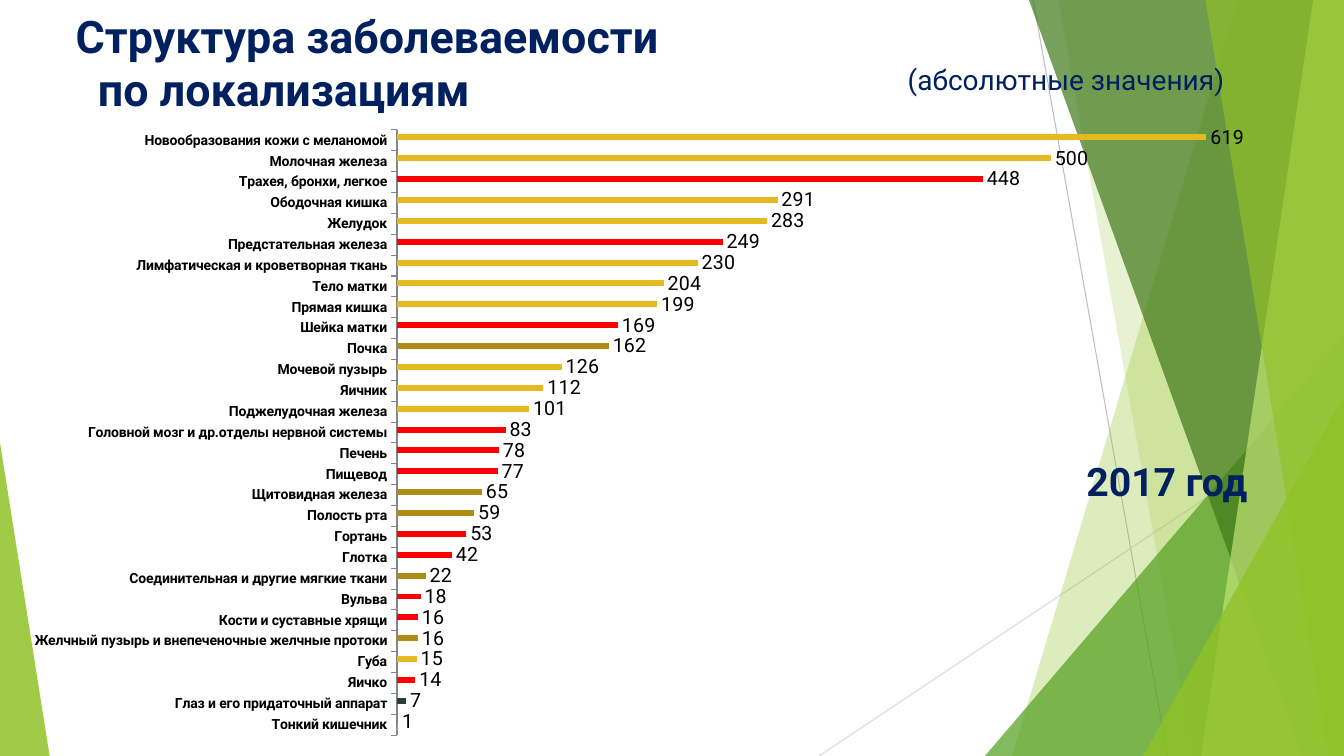
from lxml.etree import SubElement
from pptx import Presentation
from pptx.chart.data import CategoryChartData
from pptx.dml.color import RGBColor
from pptx.enum.chart import XL_CHART_TYPE as ChartType, XL_LABEL_POSITION as LabelPos
from pptx.enum.chart import XL_TICK_MARK as Tick
from pptx.enum.shapes import MSO_CONNECTOR as Connector, MSO_SHAPE as Preset
from pptx.enum.text import MSO_ANCHOR as Anchor, PP_ALIGN as Align
from pptx.oxml import parse_xml
from pptx.oxml.ns import nsdecls, qn
from pptx.util import Pt

FONT = "Roboto"
NAVY, GREEN, LEAF = "002060", "90C226", "54A021"
GOLD, RED, OLIVE, SLATE = "E6B91E", "FF0000", "AF8C14", "2C3C43"
WIDTH, HEIGHT = 960, 540

# From the bottom bar to the top one
INCIDENCE = [
    ("Тонкий кишечник", 1, OLIVE),
    ("Глаз и его придаточный аппарат", 7, SLATE),
    ("Яичко", 14, RED),
    ("Губа", 15, GOLD),
    ("Желчный пузырь и внепеченочные желчные протоки", 16, OLIVE),
    ("Кости и суставные хрящи", 16, RED),
    ("Вульва", 18, RED),
    ("Соединительная и другие мягкие ткани", 22, OLIVE),
    ("Глотка", 42, RED),
    ("Гортань", 53, RED),
    ("Полость рта", 59, OLIVE),
    ("Щитовидная железа", 65, OLIVE),
    ("Пищевод", 77, RED),
    ("Печень", 78, RED),
    ("Головной мозг и др.отделы нервной системы", 83, RED),
    ("Поджелудочная железа", 101, GOLD),
    ("Яичник", 112, GOLD),
    ("Мочевой пузырь", 126, GOLD),
    ("Почка", 162, OLIVE),
    ("Шейка матки", 169, RED),
    ("Прямая кишка", 199, GOLD),
    ("Тело матки", 204, GOLD),
    ("Лимфатическая и кроветворная ткань", 230, GOLD),
    ("Предстательная железа", 249, RED),
    ("Желудок", 283, GOLD),
    ("Ободочная кишка", 291, GOLD),
    ("Трахея, бронхи, легкое", 448, RED),
    ("Молочная железа", 500, GOLD),
    ("Новообразования кожи с меланомой", 619, GOLD),
]


def rgb(color):
    return RGBColor.from_string(color)


def paint(fill, color):
    fill.solid()
    fill.fore_color.rgb = rgb(color)


def set_font(font, size, color, bold=False):
    font.name, font.size, font.bold = FONT, Pt(size), bold
    font.color.rgb = rgb(color)


def finish_facet(facet, color, opacity):
    """Give a facet a translucent fill, no outline and no shadow; opacity in percent."""
    paint(facet.fill, color)
    tint = facet.fill._xPr.find(qn("a:solidFill"))[0]
    SubElement(tint, qn("a:alpha")).set("val", str(opacity * 1000))
    facet.line.fill.background()
    facet.shadow.inherit = False


def add_band(slide, top_x, bottom_x, color, opacity):
    """Full-height facet with a slanted left edge, reaching the right slide edge."""
    outline = slide.shapes.build_freeform(Pt(top_x), 0)
    outline.add_line_segments(
        [(Pt(WIDTH), 0), (Pt(WIDTH), Pt(HEIGHT)), (Pt(bottom_x), Pt(HEIGHT))])
    finish_facet(outline.convert_to_shape(), color, opacity)


def add_corner(slide, left, top, width, apex, color, opacity):
    """Triangle standing on the bottom edge; apex 0 is at its left, 1 at its right."""
    corner = slide.shapes.add_shape(
        Preset.ISOSCELES_TRIANGLE, Pt(left), Pt(top), Pt(width), Pt(HEIGHT - top))
    corner.adjustments[0] = apex
    finish_facet(corner, color, opacity)


def add_ray(slide, x1, y1, x2, y2, color):
    ray = slide.shapes.add_connector(Connector.STRAIGHT, Pt(x1), Pt(y1), Pt(x2), Pt(y2))
    ray.line.color.rgb = rgb(color)
    ray.line.width = Pt(0.75)
    SubElement(ray._element.spPr, qn("a:effectLst"))


def add_backdrop(slide):
    add_ray(slide, 738, 0, 834, HEIGHT, "BFBFBF")
    add_ray(slide, WIDTH, 290, 585, HEIGHT, "D9D9D9")
    add_band(slide, 884, 723, GREEN, 30)
    add_band(slide, 756, 852, GREEN, 20)
    add_corner(slide, 703.5, 240, 256.5, 1, LEAF, 72)
    add_band(slide, 735, 930, "3F7819", 70)
    add_band(slide, 938, 858, "C0E474", 70)
    add_band(slide, 861, 949, GREEN, 65)
    add_corner(slide, 816.5, 283, 143.5, 1, GREEN, 80)
    add_corner(slide, 0, 316, 35.5, 0, GREEN, 85)


def add_text(slide, left, top, width, height, lines, size, bold=False,
             align=Align.CENTER, anchor=Anchor.MIDDLE):
    """Text box; lines holds pairs of text and left indent."""
    frame = slide.shapes.add_textbox(Pt(left), Pt(top), Pt(width), Pt(height)).text_frame
    frame.word_wrap = True
    frame.vertical_anchor = anchor
    frame.margin_left = frame.margin_right = frame.margin_top = frame.margin_bottom = 0
    frame.text = "\n".join(text for text, _ in lines)
    for paragraph, (_, indent) in zip(frame.paragraphs, lines):
        paragraph.alignment = align
        paragraph._p.get_or_add_pPr().set("marL", str(Pt(indent)))
        set_font(paragraph.runs[0].font, size, NAVY, bold)


def set_plot_area(chart, **fractions):
    """Fix the inner plot area as fractions of the chart frame."""
    plot_area = chart._chartSpace.chart.plotArea
    for layout in plot_area.findall(qn("c:layout")):
        plot_area.remove(layout)
    sizes = "".join(f'<c:{key} val="{value}"/>' for key, value in fractions.items())
    plot_area.insert(0, parse_xml(
        f'<c:layout {nsdecls("c")}><c:manualLayout><c:layoutTarget val="inner"/>'
        f'<c:xMode val="edge"/><c:yMode val="edge"/>{sizes}</c:manualLayout></c:layout>'))


def add_incidence_chart(slide):
    organs, cases, colors = zip(*INCIDENCE)
    data = CategoryChartData()
    data.categories = organs
    data.add_series("Series 1", [1] + [None] * (len(organs) - 1))
    data.add_series("Series 2", cases)
    chart = slide.shapes.add_chart(
        ChartType.BAR_CLUSTERED, Pt(16.5), Pt(88.5), Pt(921), Pt(437), data).chart
    chart.has_legend = chart.has_title = False
    set_font(chart.font, 14, "000000")
    set_plot_area(chart, x=0.29, y=0.01, w=0.71, h=0.99)

    organ_axis, case_axis = chart.category_axis, chart.value_axis
    set_font(organ_axis.tick_labels.font, 10, "000000", bold=True)
    organ_axis.major_tick_mark = Tick.OUTSIDE
    organ_axis.format.line.color.rgb = rgb("868686")
    case_axis.minimum_scale, case_axis.maximum_scale = 0, 700
    case_axis.has_major_gridlines = False
    case_axis.visible = False

    plot = chart.plots[0]
    plot.gap_width, plot.overlap = 150, 0
    plot.vary_by_categories = False
    extra, main_series = plot.series
    paint(extra.format.fill, GREEN)
    paint(main_series.format.fill, LEAF)
    for index, color in enumerate(colors):
        paint(main_series.points[index].format.fill, color)
    labels = main_series.data_labels
    labels.show_value = True
    labels.position = LabelPos.OUTSIDE_END
    set_font(labels.font, 14, "000000")


def main():
    deck = Presentation()
    deck.slide_width, deck.slide_height = Pt(WIDTH), Pt(HEIGHT)
    slide = deck.slides.add_slide(deck.slide_layouts[6])
    add_backdrop(slide)
    add_text(slide, 0, 6, 937, 75,
             [("Структура заболеваемости", 54), ("по локализациям", 70)],
             32, bold=True, align=Align.LEFT, anchor=Anchor.TOP)
    add_text(slide, 563, 39.5, 397, 34, [("(абсолютные значения)", 0)], 20)
    add_text(slide, 722, 316, 223, 55.5, [("2017 год", 0)], 28, bold=True)
    add_incidence_chart(slide)
    deck.save("out.pptx")


if __name__ == "__main__":
    main()
